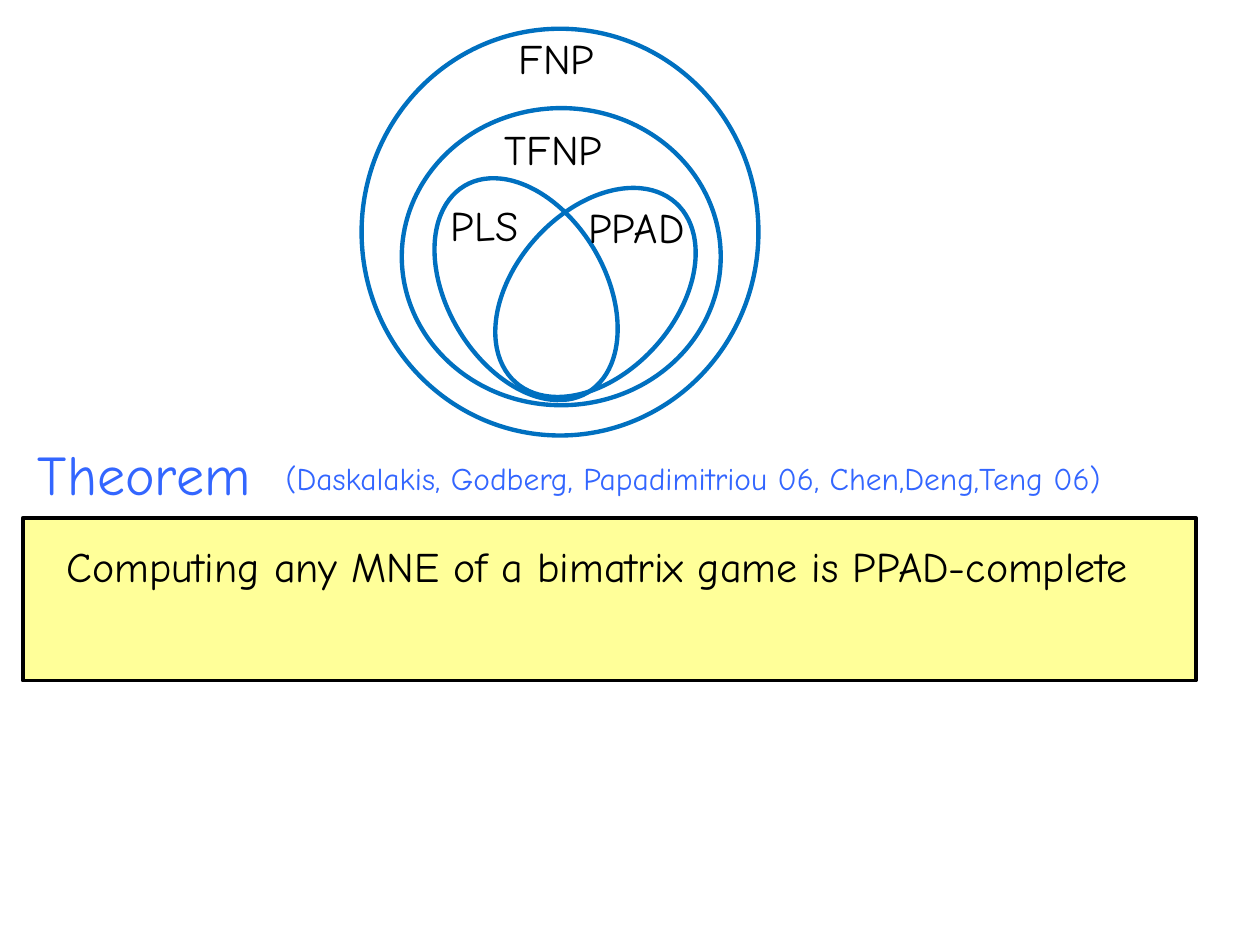
from pptx import Presentation
from pptx import util as u
from pptx.dml import color
from pptx.enum import shapes, text

FONT = "Comic Neue"
BLACK, BLUE, HEADING, YELLOW = "000000", "0070C0", "3366FF", "FFFF99"

CLASSES = [
    ((7.29, 0.58, 8, 8.2), 0),
    ((8.1, 2.18, 6.43, 5.99), 0),
    ((8.18, 4.24, 4.85, 3.18), 59.2),
    ((9.58, 4.27, 4.85, 3.25), 311.8),
]
LABELS = [
    ("FNP", (10.21, 0.53, 2.16, 1.27), False),
    ("TFNP", (9.93, 2.36, 2.74, 1.27), False),
    ("PLS", (8.84, 3.89, 2.26, 1.27), True),
    ("PPAD", (11.61, 3.94, 2.79, 1.27), True),
]


def rgb(value):
    return color.RGBColor.from_string(value)


def place(sp, box):
    sp.left, sp.top, sp.width, sp.height = (u.Cm(v) for v in box)


def add_outline(s, kind, box, line, width, fill=None, rotation=0):
    sp = s.shapes.add_shape(kind, *(u.Cm(v) for v in box))
    sp.shadow.inherit = False
    sp.rotation = rotation
    sp.line.color.rgb = rgb(line)
    sp.line.width = u.Pt(width)
    if fill:
        sp.fill.solid()
        sp.fill.fore_color.rgb = rgb(fill)
    else:
        sp.fill.background()


def write(sp, words, size, ink, wrap):
    tf = sp.text_frame
    tf.word_wrap = wrap
    tf.auto_size = text.MSO_AUTO_SIZE.SHAPE_TO_FIT_TEXT
    tf.vertical_anchor = text.MSO_ANCHOR.TOP
    p = tf.paragraphs[0]
    p.alignment = text.PP_ALIGN.LEFT
    r = p.add_run()
    r.text = words
    r.font.name = FONT
    r.font.size = u.Pt(size)
    r.font.color.rgb = rgb(ink)


def add_text(s, words, box, size=24, ink=BLACK, wrap=True):
    sp = s.shapes.add_textbox(*(u.Cm(v) for v in box))
    write(sp, words, size, ink, wrap)


def add_title(s, words, box):
    sp = s.shapes.title
    place(sp, box)
    write(sp, words, 32, HEADING, False)


def main():
    prs = Presentation()
    prs.slide_width, prs.slide_height = u.Cm(25.4), u.Cm(19.05)
    s = prs.slides.add_slide(prs.slide_layouts[5])

    add_title(s, "Theorem", (0.51, 8.74, 5.18, 1.6))
    for box, rotation in CLASSES:
        add_outline(s, shapes.MSO_SHAPE.OVAL, box, BLUE, 2.5, rotation=rotation)
    for words, box, wrap in LABELS:
        add_text(s, words, box, wrap=wrap)

    add_outline(s, shapes.MSO_SHAPE.RECTANGLE, (0.46, 10.44, 23.65, 3.28),
                BLACK, 2, fill=YELLOW)
    add_text(s, "Computing any MNE of a bimatrix game is PPAD-complete",
             (1.09, 10.77, 22.61, 2.31))
    add_text(s, "(Daskalakis, Godberg, Papadimitriou 06, Chen,Deng,Teng 06)",
             (5.51, 9.12, 18.47, 1.02), size=18, ink=HEADING, wrap=False)

    prs.save("out.pptx")


if __name__ == "__main__":
    main()
